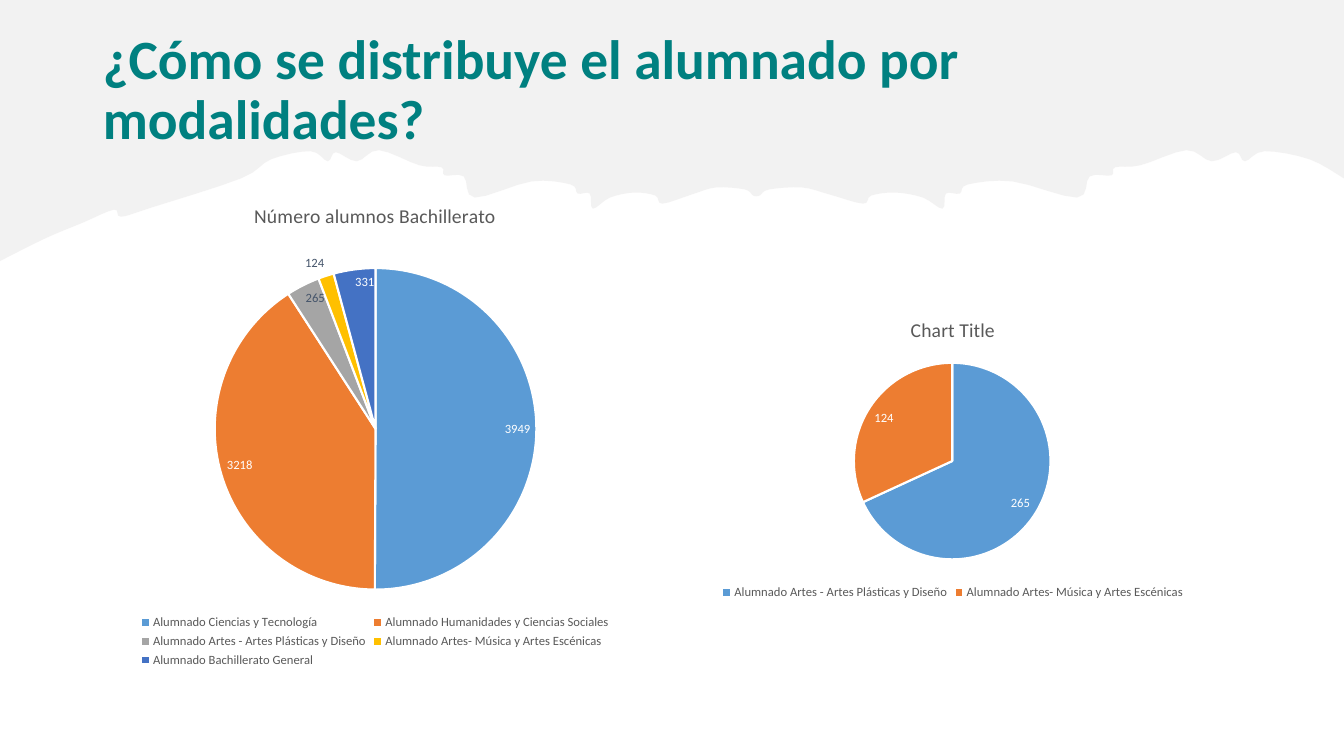
from lxml.etree import SubElement
from pptx import Presentation
from pptx.chart.data import CategoryChartData
from pptx.dml.color import RGBColor
from pptx.enum.chart import XL_CHART_TYPE, XL_LABEL_POSITION, XL_LEGEND_POSITION
from pptx.enum.text import MSO_ANCHOR, PP_ALIGN
from pptx.oxml.ns import qn
from pptx.util import Inches, Pt

# Content
FONT = "Calibri"
TITLE = "¿Cómo se distribuye el alumnado por modalidades?"
SLICE_COLORS = ["5B9BD5", "ED7D31", "A5A5A5", "FFC000", "4472C4"]
GREY, WHITE, SLATE = "595959", "FFFFFF", "44546A"
ARTS = [("Alumnado Artes - Artes Plásticas y Diseño", 265),
        ("Alumnado Artes- Música y Artes Escénicas", 124)]
INSIDE, OUTSIDE = XL_LABEL_POSITION.INSIDE_END, XL_LABEL_POSITION.OUTSIDE_END

# box: left, top, width, height; pie: left, top, diameter; dark: point -> label place
CHARTS = [
    dict(title="Número alumnos Bachillerato", box=(0.43, 1.82, 6.58, 4.84),
         pie=(2.13, 2.66, 3.19), dark={2: INSIDE, 3: OUTSIDE},
         rows=[("Alumnado Ciencias y Tecnología", 3949),
               ("Alumnado Humanidades y Ciencias Sociales", 3218),
               *ARTS,
               ("Alumnado Bachillerato General", 331)]),
    dict(title="Chart Title", box=(6.95, 2.99, 5, 3),
         pie=(8.47, 3.6, 1.95), dark={}, rows=ARTS),
]

# Torn lower edge of the band: the slope at the left, then the half that is
# mirrored about CENTER and stretched to reach the right side of the slide
WIDTH, CENTER = 13.33, 7.5
SLOPE = [(0, 2.59), (0.46, 2.36), (0.82, 2.21), (1.13, 2.08), (1.2, 2.15), (1.5, 2.06)]
HALF = [
    (2.39, 1.77), (2.69, 1.58), (3.08, 1.5), (3.25, 1.6), (3.33, 1.51),
    (3.54, 1.6), (3.76, 1.49), (4.16, 1.64), (4.38, 1.66), (4.41, 1.74),
    (4.6, 1.75), (4.71, 1.96), (5.27, 1.8), (5.66, 1.83), (5.73, 1.92),
    (5.85, 1.92), (5.88, 2.07), (6.05, 1.96), (6.29, 1.91), (6.5, 1.94),
    (6.57, 2.02), (6.86, 1.93), (7.1, 1.86), (7.39, 1.88), (7.47, 1.94),
]
STEPS = 4


def rgb(value):
    return RGBColor.from_string(value)


def style(font, size, color, bold=False):
    font.name, font.size, font.bold = FONT, Pt(size), bold
    font.color.rgb = rgb(color)


def smooth(points):
    """Points of a Catmull-Rom curve through the given points."""
    padded = [points[0], *points, points[-1]]
    for a, b, c, d in zip(padded, padded[1:], padded[2:], padded[3:]):
        for i in range(STEPS):
            t = i / STEPS
            yield tuple(q + t * ((r - p) + t * ((2 * p - 5 * q + 4 * r - s)
                                                + t * (3 * (q - r) + s - p))) / 2
                        for p, q, r, s in zip(a, b, c, d))
    yield points[-1]


def band_outline():
    stretch = (WIDTH - CENTER) / (CENTER - HALF[0][0])
    mirrored = [(CENTER + (CENTER - x) * stretch, y) for x, y in reversed(HALF)]
    return [*smooth(SLOPE + HALF + mirrored), (WIDTH, 0), (0, 0)]


def place_pie(chart, box, pie):
    left, top, width, height = box
    x, y, size = pie
    area = chart._chartSpace.chart.plotArea
    for old in area.findall(qn("c:layout")):
        area.remove(old)
    layout = SubElement(area, qn("c:layout"))
    area.insert(0, layout)
    manual = SubElement(layout, qn("c:manualLayout"))
    for tag, val in [("layoutTarget", "inner"), ("xMode", "edge"), ("yMode", "edge"),
                     ("x", (x - left) / width), ("y", (y - top) / height),
                     ("w", size / width), ("h", size / height)]:
        SubElement(manual, qn("c:" + tag)).set("val", str(val))


def add_pie(s, title, box, pie, dark, rows):
    data = CategoryChartData()
    data.categories = [name for name, _ in rows]
    data.add_series("Series 1", [value for _, value in rows])
    chart = s.shapes.add_chart(XL_CHART_TYPE.PIE, *map(Inches, box), data).chart
    style(chart.font, 10, "000000")

    # Title and legend
    chart.has_title = True
    tf = chart.chart_title.text_frame
    tf.text = title
    style(tf.paragraphs[0].runs[0].font, 14, GREY)
    chart.has_legend = True
    chart.legend.position = XL_LEGEND_POSITION.BOTTOM
    chart.legend.include_in_layout = False
    style(chart.legend.font, 9, GREY)

    # Slices and values
    plot = chart.plots[0]
    plot.vary_by_categories = True
    series = plot.series[0]
    for i, color in enumerate(SLICE_COLORS[:len(rows)]):
        fmt = series.points[i].format
        fmt.fill.solid()
        fmt.fill.fore_color.rgb = rgb(color)
        fmt.line.color.rgb = rgb(WHITE)
        fmt.line.width = Pt(1.5)
    labels = series.data_labels
    labels.show_value = True
    labels.position = INSIDE
    style(labels.font, 9, WHITE)
    for i, position in dark.items():
        label = series.points[i].data_label
        style(label.font, 9, SLATE)
        label.position = position
    place_pie(chart, box, pie)


prs = Presentation()
prs.slide_width, prs.slide_height = Inches(WIDTH), Inches(7.5)
s = prs.slides.add_slide(prs.slide_layouts[5])

# Grey band, behind the title
start, *others = [(Inches(x), Inches(y)) for x, y in band_outline()]
builder = s.shapes.build_freeform(*start)
builder.add_line_segments(others)
band = builder.convert_to_shape()
band.shadow.inherit = False
band.fill.solid()
band.fill.fore_color.rgb = rgb("E7E6E6")
band.line.fill.background()
fill_color = band._element.spPr.find(qn("a:solidFill"))[0]
SubElement(fill_color, qn("a:alpha")).set("val", "50000")
s.shapes._spTree.insert(2, band._element)

# Title
sp = s.shapes.title
sp.left, sp.top, sp.width, sp.height = map(Inches, (0.92, 0.4, 11.5, 1.02))
tf = sp.text_frame
tf.text = TITLE
tf.word_wrap = True
tf.vertical_anchor = MSO_ANCHOR.MIDDLE
p = tf.paragraphs[0]
p.alignment = PP_ALIGN.LEFT
p.line_spacing = 0.9
style(p.runs[0].font, 39.6, "008080", bold=True)

# Pie charts
for chart_parts in CHARTS:
    add_pie(s, **chart_parts)

prs.save("out.pptx")
